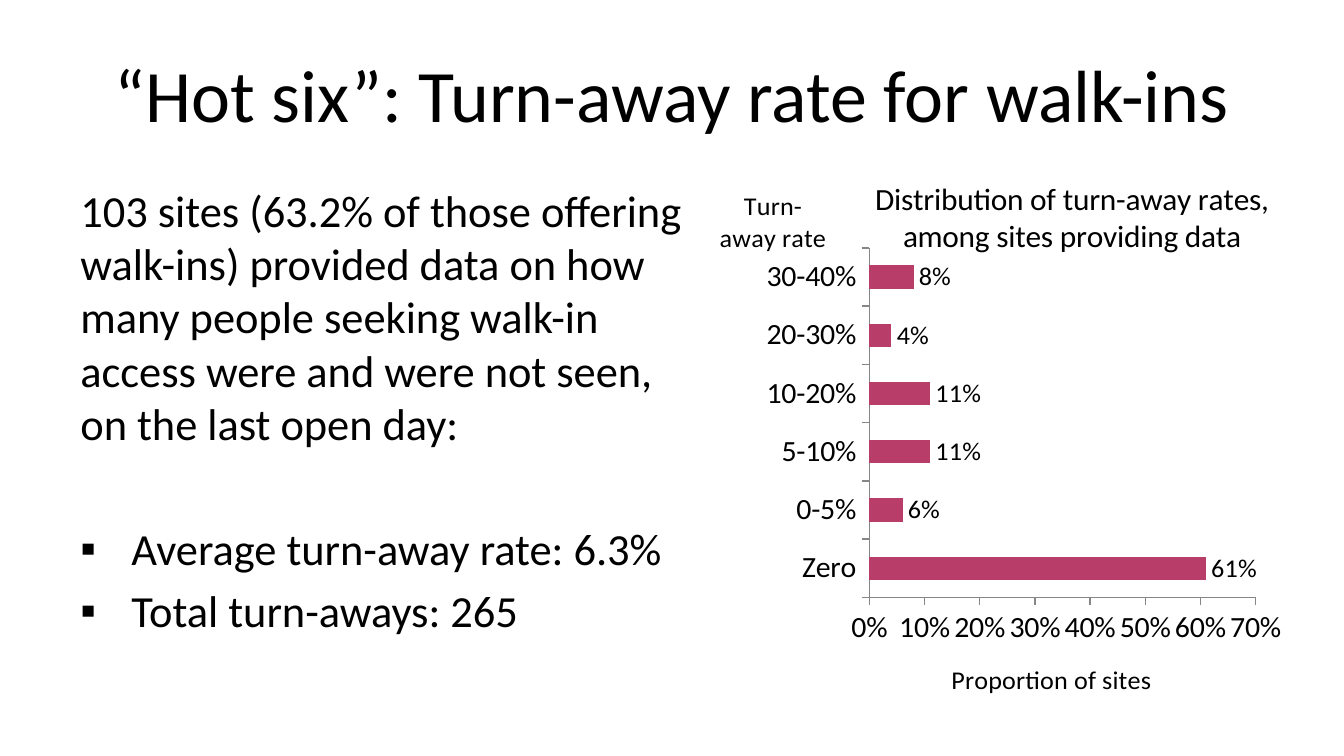
from lxml import etree
from pptx import Presentation
from pptx.chart.data import CategoryChartData
from pptx.dml.color import RGBColor
from pptx.enum.chart import XL_CHART_TYPE, XL_LABEL_POSITION, XL_TICK_MARK
from pptx.enum.text import MSO_ANCHOR, PP_ALIGN
from pptx.oxml.ns import qn
from pptx.util import Inches, Pt

BAR = XL_CHART_TYPE.BAR_CLUSTERED
OUTSIDE_END = XL_LABEL_POSITION.OUTSIDE_END
TICK_OUT = XL_TICK_MARK.OUTSIDE
MIDDLE, TOP = MSO_ANCHOR.MIDDLE, MSO_ANCHOR.TOP
LEFT, CENTER = PP_ALIGN.LEFT, PP_ALIGN.CENTER

W = Inches(10)
H = W * 9 // 16
FONT, BLACK, BERRY, GREY = "Calibri", "000000", "B83D68", "868686"
BODY_SIZE = 23.8

INTRO = ("103 sites (63.2% of those offering walk-ins) provided data on how many "
         "people seeking walk-in access were and were not seen, on the last open day:")
BULLETS = ["Average turn-away rate: 6.3%", "Total turn-aways: 265"]
RATES = {"Zero": 0.61, "0-5%": 0.06, "5-10%": 0.11,
         "10-20%": 0.11, "20-30%": 0.04, "30-40%": 0.08}


def rgb(color):
    return RGBColor.from_string(color)


def box(x, y, w, h):
    """Turn percentages of the slide into a position and size."""
    return [int(side * share / 100) for side, share in zip((W, H, W, H), (x, y, w, h))]


def set_font(font, size):
    for name, value in {"name": FONT, "size": Pt(size), "bold": False}.items():
        setattr(font, name, value)
    font.color.rgb = rgb(BLACK)


def add_text(s, area, anchor):
    tf = s.shapes.add_textbox(*area).text_frame
    tf.word_wrap, tf.vertical_anchor = True, anchor
    return tf


def write(p, text, size, align=LEFT, before=0):
    p.alignment, p.space_before = align, Pt(before)
    r = p.add_run()
    r.text = text
    set_font(r.font, size)


def add_title(s, area):
    tf = add_text(s, area, MIDDLE)
    write(tf.paragraphs[0], "“Hot six”: Turn-away rate for walk-ins", 39.6, CENTER)


def add_body(s, area):
    tf = add_text(s, area, TOP)
    gap = BODY_SIZE * 0.2
    write(tf.paragraphs[0], INTRO, BODY_SIZE, before=gap)
    # The first bullet stands one line lower
    for text, before in zip(BULLETS, (38.5, gap)):
        p = tf.add_paragraph()
        write(p, text, BODY_SIZE, before=before)
        pPr = p._p.get_or_add_pPr()
        indent = Inches(0.38)
        pPr.set("marL", str(indent))
        pPr.set("indent", str(-indent))
        etree.SubElement(pPr, qn("a:buFont")).set("typeface", "Arial")
        etree.SubElement(pPr, qn("a:buChar")).set("char", "▪")


def make_layout(**values):
    layout = etree.Element(qn("c:layout"))
    manual = etree.SubElement(layout, qn("c:manualLayout"))
    for tag, value in values.items():
        etree.SubElement(manual, qn("c:" + tag)).set("val", str(value))
    return layout


def place_title(title, text, size, x, y):
    """Write a chart or axis title with its corner at a share of the chart."""
    tf = title.text_frame
    write(tf.paragraphs[0], text, size, CENTER)
    tf._txBody.find(qn("a:bodyPr")).set("rot", "0")
    element = title._element
    for old in element.findall(qn("c:layout")):
        element.remove(old)
    element.find(qn("c:tx")).addnext(
        make_layout(xMode="edge", yMode="edge", x=x, y=y))


def add_rate_chart(s, area):
    data = CategoryChartData(number_format="0%")
    data.categories = list(RATES)
    data.add_series("Series 1", list(RATES.values()))
    chart = s.shapes.add_chart(BAR, *area, data).chart
    chart.has_legend = False
    set_font(chart.font, 14)

    # Titles
    place_title(chart.chart_title,
                "Distribution of turn-away rates, among sites providing data",
                16.8, 0.26, 0.03)
    cat, val = chart.category_axis, chart.value_axis
    place_title(cat.axis_title, "Turn-away rate", 14, 0, 0.05)
    place_title(val.axis_title, "Proportion of sites", 14, 0.39, 0.93)

    # Axes
    for axis in (cat, val):
        axis.has_major_gridlines = False
        axis.major_tick_mark = TICK_OUT
        axis.format.line.color.rgb = rgb(GREY)
        axis.format.line.width = Pt(0.75)
        set_font(axis.tick_labels.font, 16)
    val.minimum_scale, val.maximum_scale, val.major_unit = 0, 0.7, 0.1
    val.tick_labels.number_format = "0%"
    val.tick_labels.number_format_is_linked = False

    # Bars and their labels
    plot = chart.plots[0]
    plot.gap_width, plot.vary_by_categories = 150, False
    fill = plot.series[0].format.fill
    fill.solid()
    fill.fore_color.rgb = rgb(BERRY)
    plot.has_data_labels = True
    labels = plot.data_labels
    for name, value in {"show_value": True, "position": OUTSIDE_END,
                        "number_format": "0%",
                        "number_format_is_linked": False}.items():
        setattr(labels, name, value)
    set_font(labels.font, 14)

    # Inner plot area
    plot_area = chart._chartSpace.chart.plotArea
    for old in plot_area.findall(qn("c:layout")):
        plot_area.remove(old)
    plot_area.insert(0, make_layout(layoutTarget="inner", xMode="edge", yMode="edge",
                                    x=0.26, y=0.17, w=0.65, h=0.65))


def main():
    prs = Presentation()
    prs.slide_width, prs.slide_height = W, H
    s = prs.slides.add_slide(prs.slide_layouts[6])
    add_title(s, box(5, 4, 90, 16.7))
    add_body(s, box(5, 23.3, 48.2, 67.5))
    add_rate_chart(s, box(53.2, 20.7, 44.2, 72.4))
    prs.save("out.pptx")


if __name__ == "__main__":
    main()
